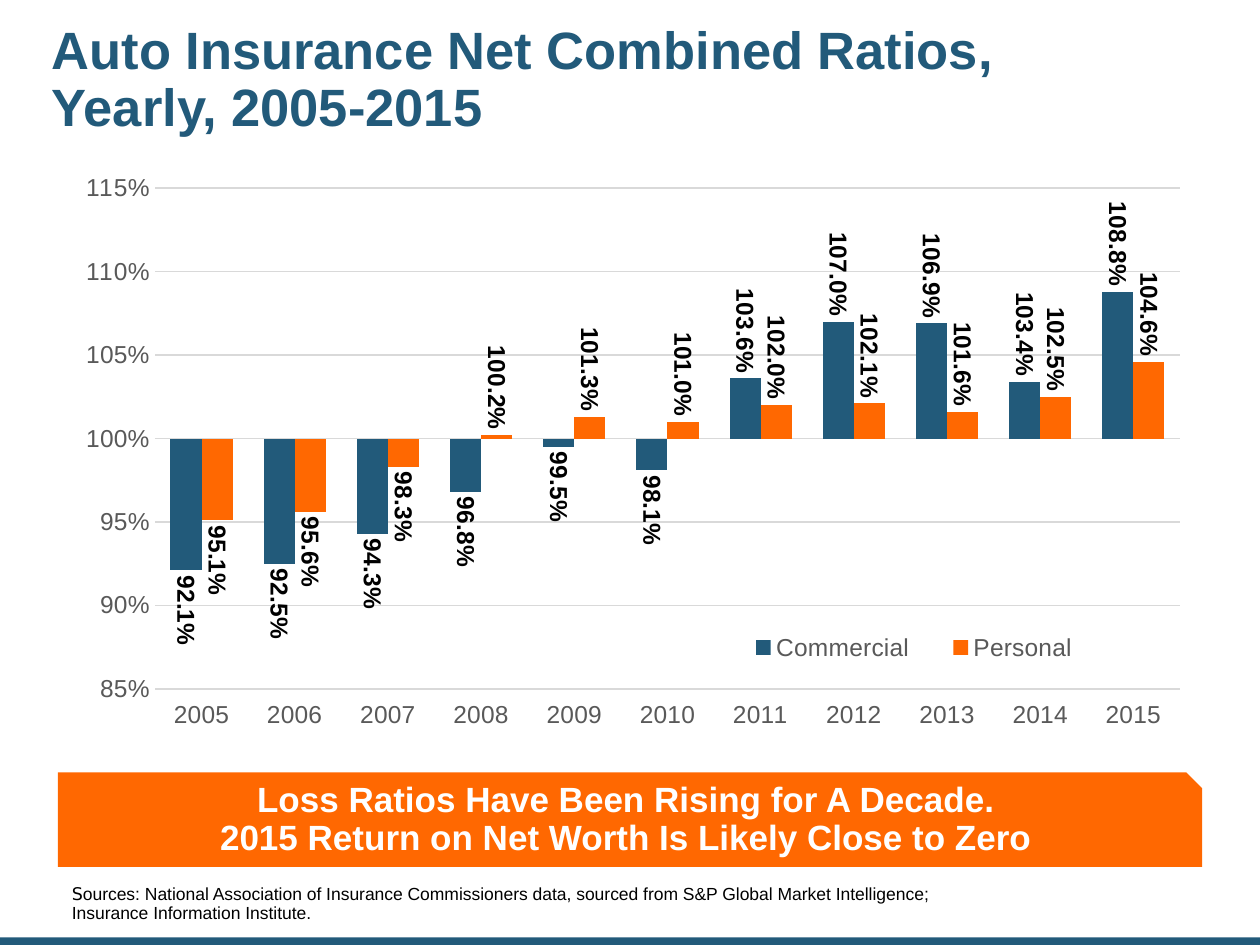
from pptx import Presentation
from pptx.chart.data import CategoryChartData
from pptx.dml.color import RGBColor
from pptx.enum.chart import (XL_CHART_TYPE, XL_LABEL_POSITION, XL_LEGEND_POSITION,
                             XL_TICK_LABEL_POSITION, XL_TICK_MARK)
from pptx.enum.shapes import MSO_SHAPE
from pptx.enum.text import MSO_ANCHOR, MSO_AUTO_SIZE, PP_ALIGN
from pptx.oxml import parse_xml
from pptx.oxml.ns import nsdecls, qn
from pptx.util import Inches, Pt

COLORS = {"blue": "225A7A", "orange": "FF6801", "white": "FFFFFF",
          "black": "000000", "gray": "595959", "grid": "D9D9D9"}
YEARS = [str(year) for year in range(2005, 2016)]
RATIOS = {
    "Commercial": ("blue", [0.921, 0.925, 0.943, 0.968, 0.995, 0.981,
                            1.036, 1.070, 1.069, 1.034, 1.088]),
    "Personal": ("orange", [0.951, 0.956, 0.983, 1.002, 1.013, 1.010,
                            1.020, 1.021, 1.016, 1.025, 1.046]),
}


def apply(target, values):
    for name, value in values.items():
        setattr(target, name, value)


class SlideBuilder:
    """Builds one slide on a grid of 100 columns by 75 rows."""

    def __init__(self):
        self.deck = Presentation()
        apply(self.deck, {"slide_width": Inches(10), "slide_height": Inches(7.5)})
        self.page = self.deck.slides.add_slide(self.deck.slide_layouts[1])

    def place(self, left, top, width, height):
        column, row = self.deck.slide_width / 100, self.deck.slide_height / 75
        return [int(left * column), int(top * row), int(width * column), int(height * row)]

    def style(self, font, size, color, bold=False, name="Arial"):
        apply(font, {"size": Pt(size), "bold": bold, "name": name})
        font.color.rgb = RGBColor.from_string(COLORS[color])

    def paint(self, fill, color):
        fill.solid()
        fill.fore_color.rgb = RGBColor.from_string(COLORS[color])

    def fill_text(self, box, lines, size, color, bold=False, align=PP_ALIGN.LEFT,
                  anchor=MSO_ANCHOR.MIDDLE, margins=(0.05, 0.05, 0.05, 0.05), lead=""):
        frame = box.text_frame
        left, top, right, bottom = map(Inches, margins)
        apply(frame, {"word_wrap": True, "auto_size": MSO_AUTO_SIZE.NONE,
                      "vertical_anchor": anchor, "margin_left": left, "margin_top": top,
                      "margin_right": right, "margin_bottom": bottom})
        para = frame.paragraphs[0]
        apply(para, {"alignment": align, "line_spacing": 0.9, "space_before": Pt(0)})
        if lead:
            span = para.add_run()
            span.text = lead
            self.style(span.font, size, color, bold, "DejaVu Sans")
        for number, line in enumerate(lines):
            if number:
                para.add_line_break()
            span = para.add_run()
            span.text = line
            self.style(span.font, size, color, bold)
        return para

    def move(self, box, cells):
        apply(box, dict(zip(("left", "top", "width", "height"), self.place(*cells))))

    def title(self, cells, lines):
        box = self.page.shapes.title
        self.move(box, cells)
        self.fill_text(box, lines, 30, "blue", bold=True)

    def source(self, cells, lead, lines):
        box = self.page.placeholders[1]
        self.move(box, cells)
        para = self.fill_text(box, lines, 10, "black", anchor=MSO_ANCHOR.BOTTOM,
                              margins=(0, 0, 0, 0), lead=lead)
        properties = para._p.get_or_add_pPr()
        properties.set("marL", "0")
        properties.set("indent", "0")
        properties.append(parse_xml(f"<a:buNone {nsdecls('a')}/>"))

    def block(self, cells, preset, color):
        box = self.page.shapes.add_shape(preset, *self.place(*cells))
        box.shadow.inherit = False
        self.paint(box.fill, color)
        box.line.fill.background()
        return box

    def banner(self, cells, lines):
        box = self.block(cells, MSO_SHAPE.SNIP_1_RECTANGLE, "orange")
        self.fill_text(box, lines, 20, "white", bold=True, align=PP_ALIGN.CENTER,
                       margins=(0.1, 0.05, 0.1, 0.1))

    def arrange(self, element, index, target, shares):
        for old in element.findall(qn("c:layout")):
            element.remove(old)
        inner = '<c:layoutTarget val="inner"/>' if target else ""
        modes = "".join(f'<c:{axis}Mode val="edge"/>' for axis in "xy")
        sizes = "".join(f'<c:{name} val="{share}"/>' for name, share in zip("xywh", shares))
        element.insert(index, parse_xml(
            f"<c:layout {nsdecls('c')}><c:manualLayout>{inner}{modes}{sizes}"
            "</c:manualLayout></c:layout>"))

    def rule(self, line):
        line.width = Pt(0.75)
        line.color.rgb = RGBColor.from_string(COLORS["grid"])

    def chart(self, cells, categories, ratios):
        data = CategoryChartData(number_format="0.0%")
        data.categories = categories
        for name, (color, values) in ratios.items():
            data.add_series(name, values)
        chart = self.page.shapes.add_chart(
            XL_CHART_TYPE.COLUMN_CLUSTERED, *self.place(*cells), data).chart
        apply(chart, {"has_title": False, "has_legend": True})
        self.style(chart.font, 16, "gray")
        self.axes(chart)

        apply(chart.legend, {"position": XL_LEGEND_POSITION.BOTTOM,
                             "include_in_layout": False})
        self.style(chart.legend.font, 14, "gray")
        self.arrange(chart.legend._element, 1, False, (0.58, 0.76, 0.34, 0.07))
        self.arrange(chart._chartSpace.chart.plotArea, 0, True, (0.085, 0.04, 0.898, 0.823))

        plot = chart.plots[0]
        apply(plot, {"gap_width": 100, "overlap": 0, "vary_by_categories": False})
        for series, (color, values) in zip(plot.series, ratios.values()):
            series.invert_if_negative = False
            self.paint(series.format.fill, color)
            labels = series.data_labels
            apply(labels, {"show_value": True, "number_format": "0.0%",
                           "number_format_is_linked": False,
                           "position": XL_LABEL_POSITION.OUTSIDE_END})
            self.style(labels.font, 14, "black", bold=True)
            body = labels._element.find(qn("c:txPr")).find(qn("a:bodyPr"))
            body.set("rot", "5400000")
            body.set("vert", "horz")

    def axes(self, chart):
        for axis in (chart.category_axis, chart.value_axis):
            apply(axis, {"major_tick_mark": XL_TICK_MARK.NONE,
                         "minor_tick_mark": XL_TICK_MARK.NONE})
            self.style(axis.tick_labels.font, 14, "gray")
        chart.category_axis.tick_label_position = XL_TICK_LABEL_POSITION.LOW
        self.rule(chart.category_axis.format.line)
        apply(chart.value_axis, {"minimum_scale": 0.85, "maximum_scale": 1.15,
                                 "major_unit": 0.05, "crosses_at": 1,
                                 "has_major_gridlines": True})
        apply(chart.value_axis.tick_labels, {"number_format": "0%",
                                             "number_format_is_linked": False})
        chart.value_axis.format.line.fill.background()
        self.rule(chart.value_axis.major_gridlines.format.line)


def main():
    slide = SlideBuilder()
    slide.block((0, 74.4, 100, 0.6), MSO_SHAPE.RECTANGLE, "blue")
    slide.title((3.6, 1.2, 78.5, 10.4),
                ["Auto Insurance Net Combined Ratios,", "Yearly, 2005-2015"])
    slide.source((5.7, 68.8, 78.4, 4.5), "S", [
        "ources: National Association of Insurance Commissioners data, "
        "sourced from S&P Global Market Intelligence;",
        "Insurance Information Institute."])
    slide.banner((4.6, 61.3, 90.8, 7.5),
                 ["Loss Ratios Have Been Rising for A Decade.",
                  "2015 Return on Net Worth Is Likely Close to Zero"])
    slide.chart((4.6, 13, 90.6, 48.3), YEARS, RATIOS)
    slide.deck.save("out.pptx")


if __name__ == "__main__":
    main()
